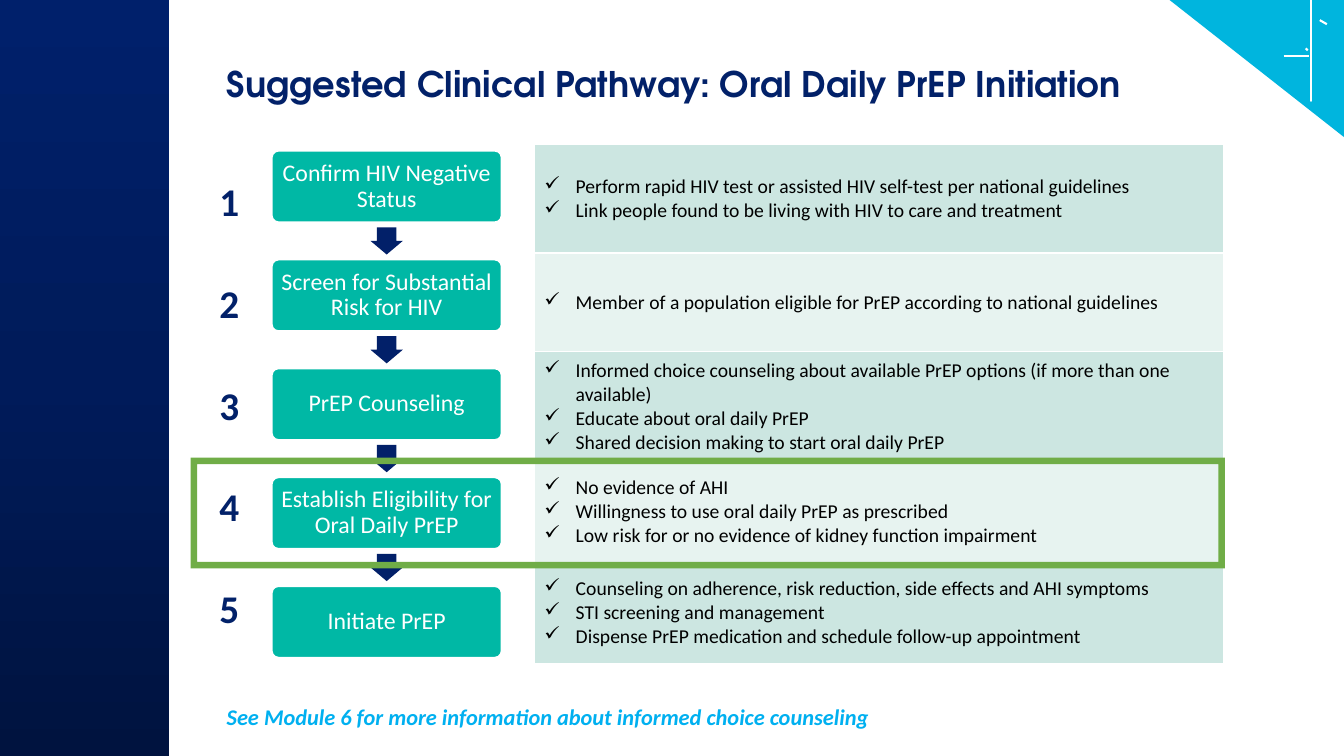
from copy import deepcopy

from lxml.etree import SubElement
from pptx import Presentation
from pptx.dml.color import RGBColor
from pptx.enum.shapes import MSO_CONNECTOR, MSO_SHAPE
from pptx.enum.text import MSO_ANCHOR, PP_ALIGN
from pptx.oxml.ns import qn
from pptx.util import Inches, Pt

NAVY, TEAL, WHITE = "022169", "00B8A5", "FFFFFF"
STEPS = [
    ("Confirm HIV Negative Status", 1.08, [
        "Perform rapid HIV test or assisted HIV self-test per national guidelines",
        "Link people found to be living with HIV to care and treatment"]),
    ("Screen for Substantial Risk for HIV", 0.98, [
        "Member of a population eligible for PrEP according to national guidelines"]),
    ("PrEP Counseling", 1.09, [
        "Informed choice counseling about available PrEP options (if more than one available)",
        "Educate about oral daily PrEP",
        "Shared decision making to start oral daily PrEP"]),
    ("Establish Eligibility for Oral Daily PrEP", 1, [
        "No evidence of AHI",
        "Willingness to use oral daily PrEP as prescribed",
        "Low risk for or no evidence of kidney function impairment"]),
    ("Initiate PrEP", 1, [
        "Counseling on adherence, risk reduction, side effects and AHI symptoms",
        "STI screening and management",
        "Dispense PrEP medication and schedule follow-up appointment"]),
]


def color(code):
    return RGBColor.from_string(code)


class PathwaySlide:
    """Draws the parts of the clinical pathway in one style."""

    def __init__(self, slide, font="Calibri"):
        self.shapes = slide.shapes
        self.font = font

    def add_words(self, paragraph, words, size, ink, bold=False, italic=False, font=None):
        run = paragraph.add_run()
        run.text = words
        run.font.name = font or self.font
        run.font.size = Pt(size)
        run.font.bold = bold
        run.font.italic = italic
        run.font.color.rgb = color(ink)

    def text(self, box, words, size, ink, **style):
        frame = self.shapes.add_textbox(*map(Inches, box)).text_frame
        frame.word_wrap = True
        self.add_words(frame.paragraphs[0], words, size, ink, **style)

    def shape(self, preset, box, fill, adjustments=(), rotation=0, outline=None):
        part = self.shapes.add_shape(preset, *map(Inches, box))
        part.shadow.inherit = False
        part.rotation = rotation
        for index, value in enumerate(adjustments):
            part.adjustments[index] = value
        part.fill.solid()
        part.fill.fore_color.rgb = color(fill)
        if outline:
            part.line.color.rgb = color(outline)
            part.line.width = Pt(2)
        else:
            part.line.fill.background()
        return part

    def sidebar(self, box, stops):
        panel = self.shape(MSO_SHAPE.RECTANGLE, box, stops[0])
        panel.fill.gradient()
        panel.fill.gradient_angle = 90
        stop_list = panel._element.spPr.find(".//" + qn("a:gsLst"))
        stop_list.insert(1, deepcopy(stop_list[0]))
        for index, (stop, code) in enumerate(zip(panel.fill.gradient_stops, stops)):
            stop.position = index / (len(stops) - 1)
            stop.color.rgb = color(code)

    def step(self, box, words):
        card = self.shape(MSO_SHAPE.ROUNDED_RECTANGLE, box, TEAL, [0.1], outline=WHITE)
        frame = card.text_frame
        frame.word_wrap = True
        frame.vertical_anchor = MSO_ANCHOR.MIDDLE
        frame.margin_left = frame.margin_right = Inches(0.07)
        frame.margin_top = frame.margin_bottom = Inches(0.07)
        paragraph = frame.paragraphs[0]
        paragraph.alignment = PP_ALIGN.CENTER
        paragraph.line_spacing = 0.9
        self.add_words(paragraph, words, 17, WHITE)

    def column(self, left, top, width, heights):
        table = self.shapes.add_table(
            len(heights), 1, Inches(left), Inches(top), Inches(width), Inches(sum(heights))).table
        table.first_row = table.horz_banding = False
        table.columns[0].width = Inches(width)
        for row, height in zip(table.rows, heights):
            row.height = Inches(height)
            properties = row.cells[0]._tc.get_or_add_tcPr()
            for side in ("lnL", "lnR", "lnT", "lnB"):
                border = SubElement(properties, qn("a:" + side), w=str(Pt(1)))
                SubElement(SubElement(border, qn("a:solidFill")), qn("a:srgbClr"), val=WHITE)
        return [row.cells[0] for row in table.rows]

    def number(self, cell, value):
        cell.fill.background()
        paragraph = cell.text_frame.paragraphs[0]
        paragraph.alignment = PP_ALIGN.CENTER
        paragraph.line_spacing = 1.5
        self.add_words(paragraph, str(value), 28, NAVY, bold=True)

    def checklist(self, cell, items, fill):
        cell.fill.solid()
        cell.fill.fore_color.rgb = color(fill)
        cell.vertical_anchor = MSO_ANCHOR.MIDDLE
        frame = cell.text_frame
        for index, item in enumerate(items):
            paragraph = frame.add_paragraph() if index else frame.paragraphs[0]
            properties = paragraph._p.get_or_add_pPr()
            properties.set("marL", str(Inches(0.31)))
            properties.set("indent", str(-Inches(0.31)))
            SubElement(properties, qn("a:buChar"), char="✓")
            self.add_words(paragraph, item, 14, "000000")

    def stroke(self, start, end):
        line = self.shapes.add_connector(MSO_CONNECTOR.STRAIGHT, *map(Inches, start + end))
        line.line.color.rgb = color(WHITE)
        line.line.width = Pt(1.5)
        SubElement(line._element.spPr, qn("a:effectLst"))

    def outline(self, points):
        builder = self.shapes.build_freeform(*points[0], scale=Inches(1))
        builder.add_line_segments(points[1:], close=True)
        drawn = builder.convert_to_shape()
        drawn.shadow.inherit = False
        drawn.fill.background()
        drawn.line.color.rgb = color(WHITE)
        drawn.line.width = Pt(1.5)


def main():
    deck = Presentation()
    deck.slide_width, deck.slide_height = Inches(13.33), Inches(7.5)
    pathway = PathwaySlide(deck.slides.add_slide(deck.slide_layouts[6]))

    pathway.sidebar((0, 0, 1.68, 7.5), ["00133F", "001B5A", "00206B"])
    pathway.text((2.15, 0.57, 10, 0.92), "Suggested Clinical Pathway: Oral Daily PrEP Initiation",
                 25.2, NAVY, bold=True, font="TeX Gyre Adventor")

    numbers = pathway.column(1.93, 1.49, 0.69, [1.01] * len(STEPS))
    details = pathway.column(5.3, 1.43, 6.84, [height for _, height, _ in STEPS])
    for index, (name, _, items) in enumerate(STEPS):
        top = 1.49 + index * 1.08
        pathway.step((2.69, top, 2.29, 0.72), name)
        if index < len(STEPS) - 1:
            pathway.shape(MSO_SHAPE.RIGHT_ARROW, (3.7, top + 0.74, 0.27, 0.32), "022069",
                          [0.6, 0.5], rotation=90)
        pathway.number(numbers[index], index + 1)
        pathway.checklist(details[index], items, ("CCE6E1", "E7F3F0")[index % 2])

    pathway.text((2.15, 6.93, 9.67, 0.37),
                 "See Module 6 for more information about informed choice counseling",
                 16, "00B0F0", bold=True, italic=True)
    pathway.shape(MSO_SHAPE.FRAME, (1.89, 4.54, 10.26, 1.1), "70AD47", [0.06])

    pathway.shape(MSO_SHAPE.RIGHT_TRIANGLE, (11.6, 0, 1.73, 1.36), "00B5DE", rotation=180)
    pathway.outline([(13.02, 0.47), (12.94, 0.52), (12.95, 0.43), (13.11, 0.16),
                     (13.12, 0.15), (13.18, 0.19), (13.19, 0.2)])
    pathway.stroke((13.09, 0.2), (13.16, 0.24))
    pathway.stroke((12.95, 0.48), (12.97, 0.5))
    pathway.stroke((12.73, 0.56), (12.98, 0.56))

    deck.save("out.pptx")


if __name__ == "__main__":
    main()
